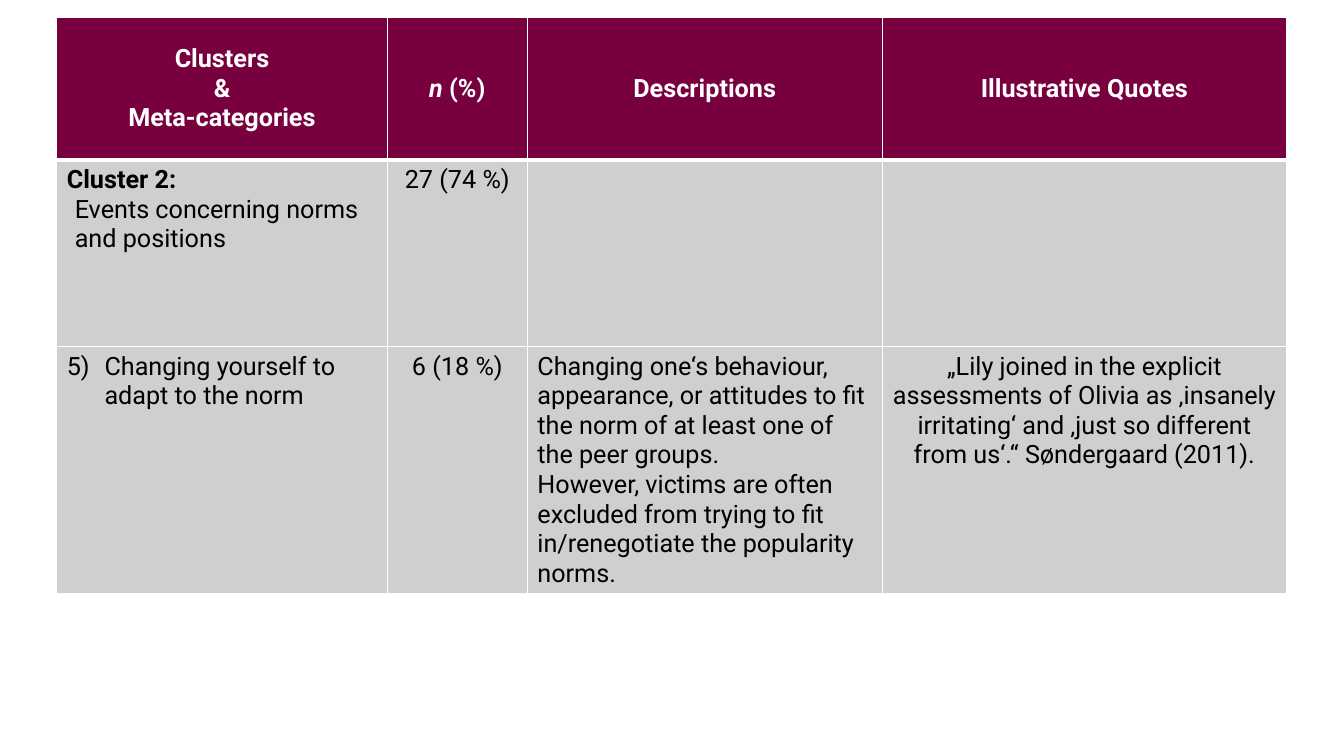
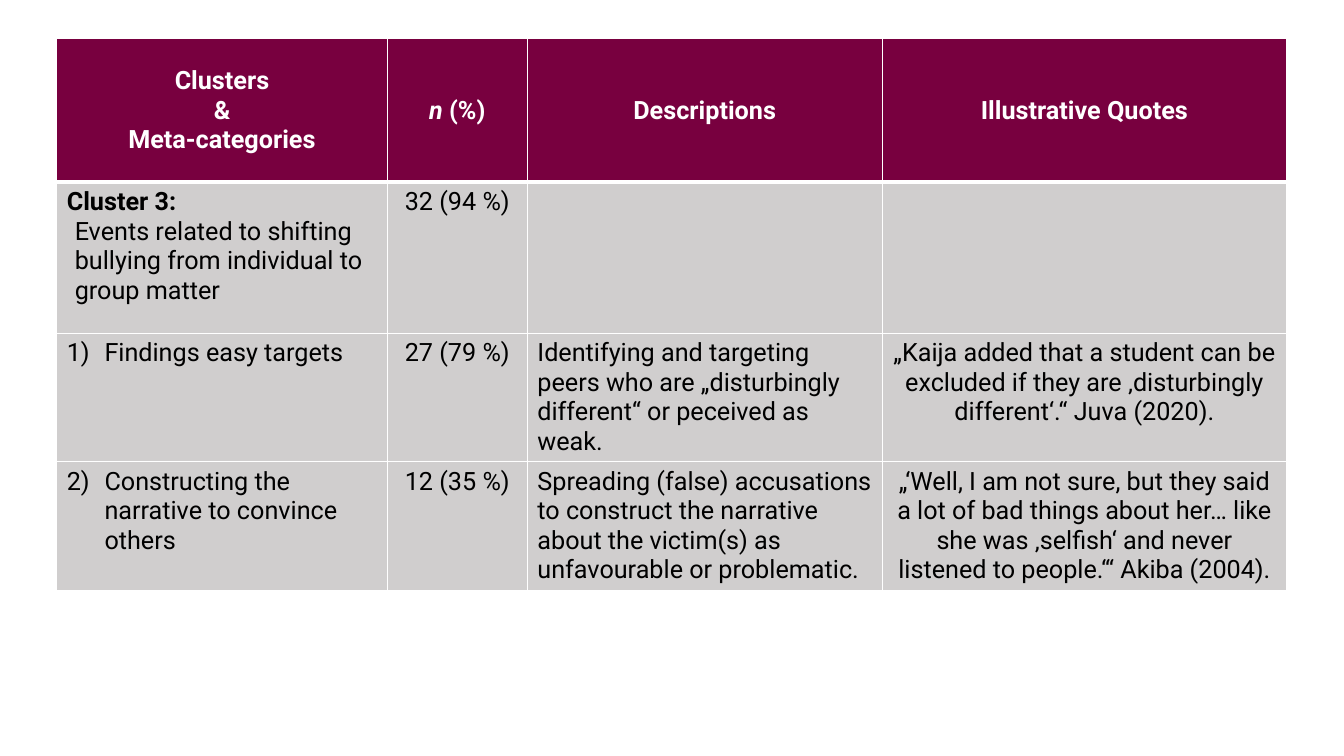
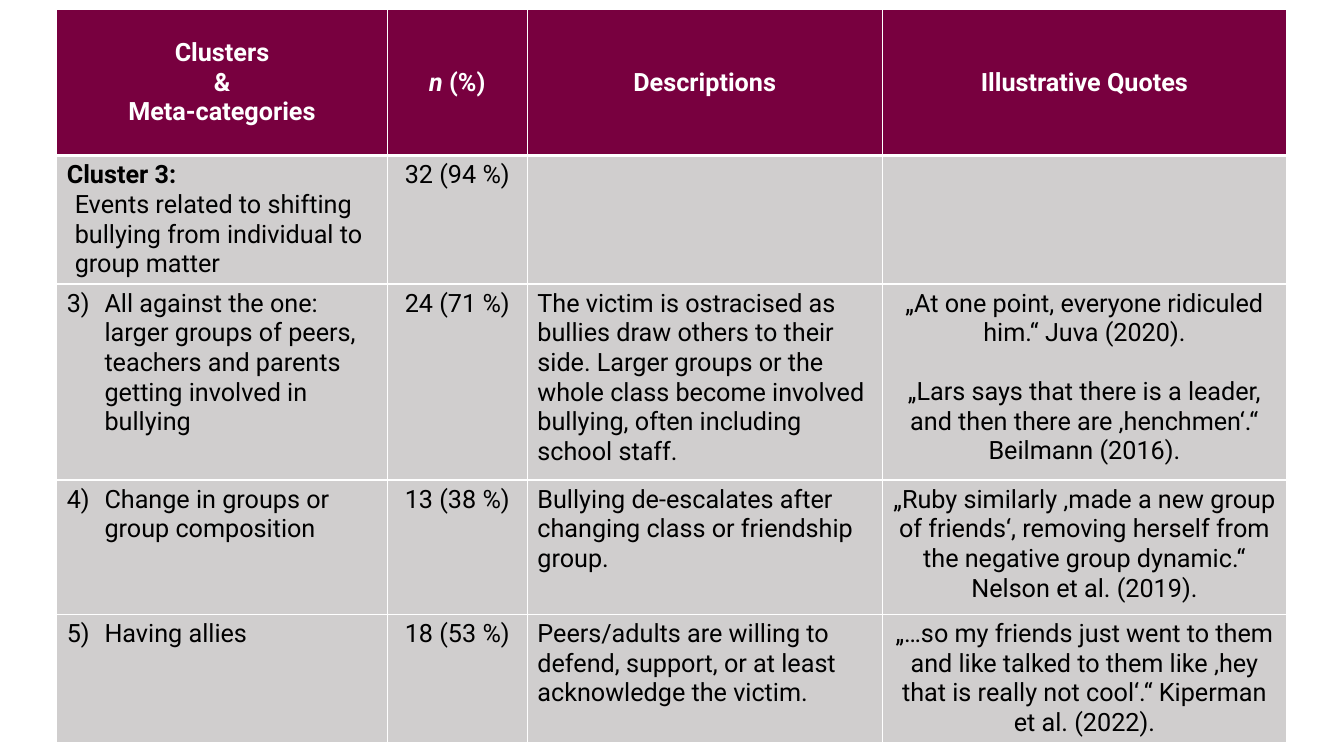
"""Build three table slides on clusters of bullying events."""
from lxml import etree
from pptx import Presentation
from pptx.dml.color import RGBColor
from pptx.enum.text import MSO_ANCHOR, PP_ALIGN
from pptx.oxml.ns import qn
from pptx.util import Cm, Pt

CENTER, LEFT = PP_ALIGN.CENTER, PP_ALIGN.LEFT
MIDDLE, TOP = MSO_ANCHOR.MIDDLE, MSO_ANCHOR.TOP
COLORS = {"header": "78003F", "body": "D0CECE", "white": "FFFFFF", "text": "000000"}
FONT, SIZE = "Roboto", Pt(18)
TABLE_LEFT = 1.43
COLUMN_WIDTHS = [8.33, 3.53, 8.94, 10.2]
COLUMN_ALIGNS = [LEFT, CENTER, LEFT, CENTER]
HEADER = [["Clusters", "&\vMeta-categories"], ["n (%)"], ["Descriptions"], ["Illustrative Quotes"]]
CLUSTER_3 = ("Cluster 3:", "Events related to shifting bullying from individual to group matter", "32 (94 %)")

SLIDES = [
    {
        "top": 0.43,
        "heights": [3.61, 4.7, 6.2],
        "cluster": ("Cluster 2:", "Events concerning norms and positions", "27 (74 %)"),
        "first_number": 5,
        "categories": [
            ("Changing yourself to adapt to the norm", "6 (18 %)",
             ["Changing one‘s behaviour, appearance, or attitudes to fit the norm of at least one "
              "of the peer groups.",
              "However, victims are often excluded from trying to fit in/renegotiate the popularity norms."],
             ["„Lily joined in the explicit assessments of Olivia as ‚insanely irritating‘ and "
              "‚just so different from us‘.“ Søndergaard (2011)."]),
        ],
    },
    {
        "top": 0.98,
        "heights": [3.61, 3.81, 3.23, 3.23],
        "cluster": CLUSTER_3,
        "first_number": 1,
        "categories": [
            ("Findings easy targets", "27 (79 %)",
             ["Identifying and targeting peers who are „disturbingly different“ or peceived as weak."],
             ["„Kaija added that a student can be excluded if they are ‚disturbingly different‘.“ "
              "Juva (2020)."]),
            ("Constructing the narrative to convince others", "12 (35 %)",
             ["Spreading (false) accusations to construct the narrative about the victim(s) as "
              "unfavourable or problematic."],
             ["„‘Well, I am not sure, but they said a lot of bad things about her… like she was "
              "‚selfish‘ and never listened to people.‘“ Akiba (2004)."]),
        ],
    },
    {
        "top": 0.24,
        "heights": [3.68, 3.23, 4.94, 3.38, 3.23],
        "cluster": CLUSTER_3,
        "first_number": 3,
        "categories": [
            ("All against the one: larger groups of peers, teachers and parents getting involved in "
             "bullying", "24 (71 %)",
             ["The victim is ostracised as bullies draw others to their side. Larger groups or the "
              "whole class become involved bullying, often including school staff."],
             ["„At one point, everyone ridiculed him.“ Juva (2020).",
              "„Lars says that there is a leader, and then there are ‚henchmen‘.“ Beilmann (2016)."]),
            ("Change in groups or group composition", "13 (38 %)",
             ["Bullying de-escalates after changing class or friendship group."],
             ["„Ruby similarly ‚made a new group of friends‘, removing herself from the negative "
              "group dynamic.“ Nelson et al. (2019)."]),
            ("Having allies", "18 (53 %)",
             ["Peers/adults are willing to defend, support, or at least acknowledge the victim."],
             ["„…so my friends just went to them and like talked to them like ‚hey that is really "
              "not cool‘.“ Kiperman et al. (2022)."]),
        ],
    },
]


def set_borders(cell, top, bottom):
    properties = cell._tc.get_or_add_tcPr()
    for tag, width in (("lnL", 1), ("lnR", 1), ("lnT", top), ("lnB", bottom)):
        line = etree.SubElement(properties, qn(f"a:{tag}"), w=str(Pt(width)))
        fill = etree.SubElement(line, qn("a:solidFill"))
        etree.SubElement(fill, qn("a:srgbClr"), val=COLORS["white"])


def indent(para, left, first=0):
    properties = para._p.get_or_add_pPr()
    properties.set("marL", str(Cm(left)))
    properties.set("indent", str(Cm(first)))
    return properties


def number(para, start):
    properties = indent(para, 0.95, -0.95)
    etree.SubElement(properties, qn("a:buFont"), typeface="+mj-lt")
    etree.SubElement(properties, qn("a:buAutoNum"), type="arabicParenR", startAt=str(start))


def style_run(span, color, bold):
    span.font.name, span.font.size, span.font.bold = FONT, SIZE, bold
    span.font.color.rgb = RGBColor.from_string(COLORS[color])


def fill_cell(cell, texts, align, is_header=False, below_header=False):
    set_borders(cell, 3 if below_header else 1, 3 if is_header else 1)
    cell.fill.solid()
    cell.fill.fore_color.rgb = RGBColor.from_string(COLORS["header" if is_header else "body"])
    cell.vertical_anchor = MIDDLE if is_header else TOP
    cell.text_frame.text = "\n".join(texts)
    for para in cell.text_frame.paragraphs:
        para.alignment = align
        for span in para.runs:
            style_run(span, "white" if is_header else "text", is_header)


def add_cluster_table(deck, content):
    page = deck.slides.add_slide(deck.slide_layouts[6])
    heights = content["heights"]
    table = page.shapes.add_table(
        len(heights), len(COLUMN_WIDTHS), Cm(TABLE_LEFT), Cm(content["top"]),
        Cm(sum(COLUMN_WIDTHS)), Cm(sum(heights))).table
    for column, width in zip(table.columns, COLUMN_WIDTHS):
        column.width = Cm(width)
    for row, height in zip(table.rows, heights):
        row.height = Cm(height)

    for column, texts in enumerate(HEADER):
        fill_cell(table.cell(0, column), texts, CENTER, is_header=True)
    share = table.cell(0, 1).text_frame.paragraphs[0]
    share.runs[0].text = "n "
    share.runs[0].font.italic = True
    unit = share.add_run()
    unit.text = "(%)"
    style_run(unit, "white", True)

    name, summary, count = content["cluster"]
    rows = [[[name, summary], [count], [], []]]
    rows += [[[label], [total], description, quotes]
             for label, total, description, quotes in content["categories"]]
    for index, cells in enumerate(rows, 1):
        for column, (texts, align) in enumerate(zip(cells, COLUMN_ALIGNS)):
            fill_cell(table.cell(index, column), texts, align, below_header=index == 1)
        for para in table.cell(index, 3).text_frame.paragraphs[1:]:
            para.space_before = Pt(21)
        if index > 1:
            label = table.cell(index, 0).text_frame.paragraphs[0]
            number(label, content["first_number"] + index - 2)

    title, detail = table.cell(1, 0).text_frame.paragraphs
    title.runs[0].font.bold = True
    indent(detail, 0.2)


def main():
    deck = Presentation()
    deck.slide_width, deck.slide_height = Cm(33.87), Cm(19.05)
    for content in SLIDES:
        add_cluster_table(deck, content)
    deck.save("out.pptx")


if __name__ == "__main__":
    main()
